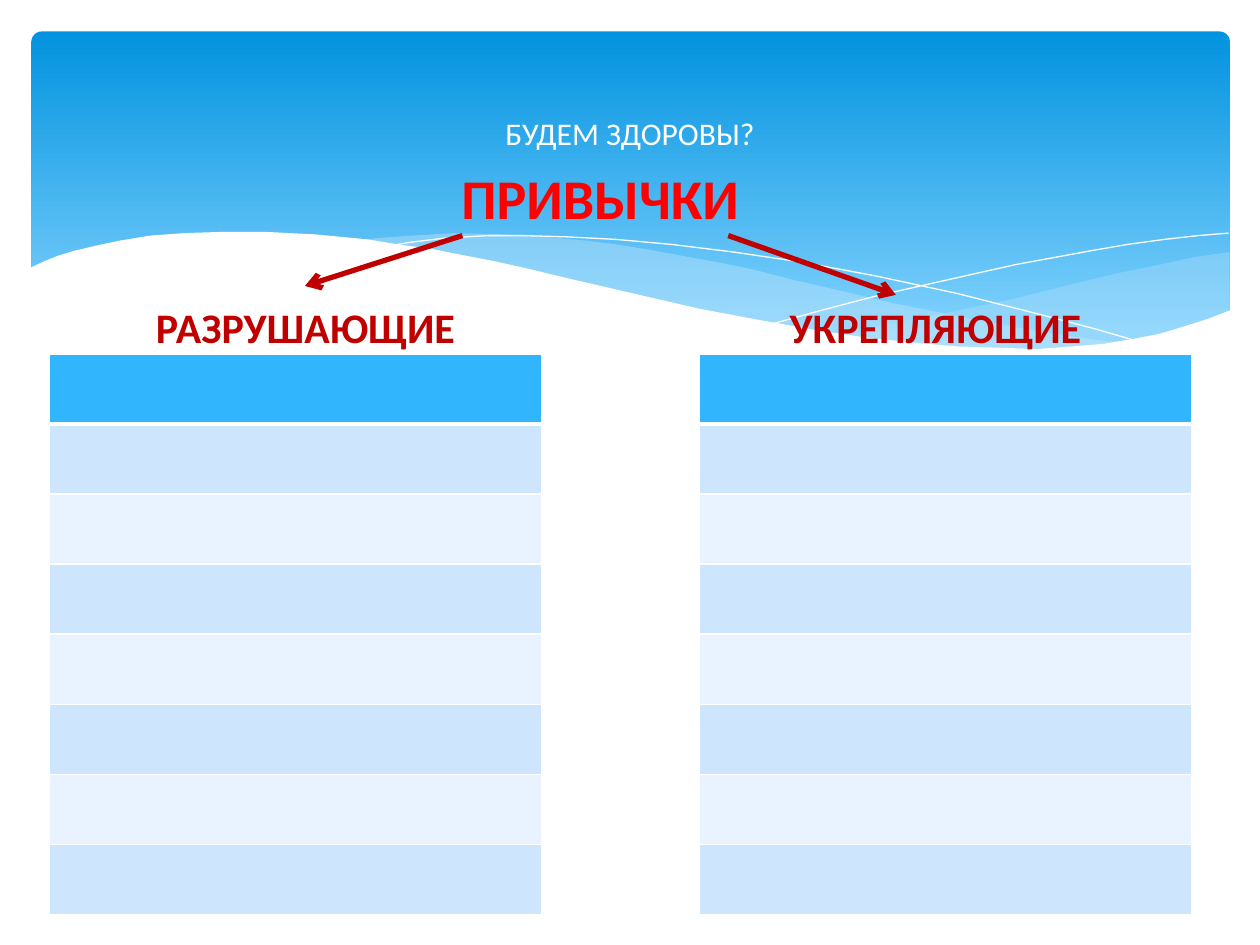
from lxml.etree import SubElement
from pptx import Presentation
from pptx.dml.color import RGBColor
from pptx.enum.shapes import MSO_CONNECTOR as CONN, MSO_SHAPE as SHAPE
from pptx.enum.text import MSO_ANCHOR as ANCHOR, MSO_AUTO_SIZE as AUTO, PP_ALIGN as ALIGN
from pptx.oxml.ns import qn
from pptx.util import Inches, Pt

WHITE = RGBColor(0xFF, 0xFF, 0xFF)
SKY_TOP = RGBColor(0x02, 0x93, 0xE0)
SKY_BOTTOM = RGBColor(0x83, 0xD3, 0xFE)
MIST = RGBColor(0xC6, 0xE7, 0xFC)
RED = RGBColor(0xFF, 0x00, 0x00)
DARK_RED = RGBColor(0xC0, 0x00, 0x00)
HEADER = RGBColor(0x31, 0xB6, 0xFD)
BANDS = [RGBColor(0xE8, 0xF3, 0xFF), RGBColor(0xCE, 0xE5, 0xFE)]

# The slide is a grid of 1000 columns by 750 rows
U = Inches(0.01)
prs = Presentation()
prs.slide_width, prs.slide_height = 1000 * U, 750 * U
s = prs.slides.add_slide(prs.slide_layouts[6])


def add_text(text, x, y, w, h, size, color, bold=True):
    tf = s.shapes.add_textbox(x * U, y * U, w * U, h * U).text_frame
    tf.word_wrap = True
    tf.auto_size = AUTO.SHAPE_TO_FIT_TEXT
    p = tf.paragraphs[0]
    p.text = text
    p.alignment = ALIGN.CENTER
    p.font.name, p.font.size, p.font.bold = "Calibri", Pt(size), bold
    p.font.color.rgb = color
    return tf


def add_wave(points, closed=True):
    fb = s.shapes.build_freeform(*points[0], scale=U)
    fb.add_line_segments(points[1:], close=closed)
    sp = fb.convert_to_shape()
    sp.shadow.inherit = False
    return sp


# Gradient sky
sp = s.shapes.add_shape(SHAPE.ROUNDED_RECTANGLE, 25 * U, 25 * U, 951 * U, 270 * U)
sp.adjustments[0] = 0.03
sp.shadow.inherit = False
sp.line.fill.background()
sp.fill.gradient()
sp.fill.gradient_angle = 270
for stop, position, color in zip(sp.fill.gradient_stops, (0, 0.9), (SKY_TOP, SKY_BOTTOM)):
    stop.position, stop.color.rgb = position, color

# Filled waves, from back to front: opacity in percent, outline
waves = [
    (29, [(976, 200), (948, 204), (921, 210), (891, 216), (861, 223), (805, 237),
          (753, 248), (706, 257), (661, 265), (691, 269), (719, 272), (745, 275),
          (769, 277), (803, 278), (835, 277), (863, 275), (889, 272), (913, 267),
          (935, 262), (949, 257), (963, 252), (976, 247)]),
    (40, [(893, 273), (866, 269), (837, 265), (807, 260), (775, 254), (741, 247),
          (706, 240), (668, 231), (629, 222), (598, 214), (569, 208), (541, 203),
          (514, 198), (489, 194), (465, 191), (442, 189), (420, 187), (399, 186),
          (361, 185), (328, 187), (299, 189), (286, 191), (323, 196), (362, 203),
          (404, 211), (449, 222), (491, 232), (530, 240), (566, 248), (601, 255),
          (634, 261), (665, 266), (695, 270), (722, 274), (748, 276), (773, 277),
          (796, 278), (828, 278), (857, 277), (876, 275)]),
    (100, [(977, 246), (959, 253), (940, 259), (920, 265), (899, 269), (875, 273),
           (850, 275), (823, 277), (793, 276), (761, 275), (726, 272), (688, 268),
           (648, 262), (603, 254), (555, 245), (503, 233), (447, 220), (418, 213),
           (391, 207), (365, 202), (340, 197), (316, 194), (292, 190), (271, 188),
           (250, 186), (230, 185), (211, 184), (177, 184), (146, 185), (119, 187),
           (95, 191), (76, 195), (59, 199), (46, 203), (36, 207), (23, 213),
           (23, 329), (977, 329)]),
]
wave_lines = [
    [(309, 195), (328, 192), (353, 189), (387, 187), (416, 187), (450, 188),
     (489, 190), (533, 194), (582, 200), (636, 208), (695, 219), (760, 233),
     (831, 251), (869, 261), (907, 272)],
    [(613, 257), (653, 246), (695, 235), (748, 223), (806, 210), (866, 199),
     (895, 194), (924, 190), (951, 187), (975, 185)],
]
for opacity, points in waves:
    if opacity == 100:  # the hairlines lie under the white wave
        for line in wave_lines:
            sp = add_wave(line, closed=False)
            sp.fill.background()
            sp.line.color.rgb, sp.line.width = WHITE, 0
    sp = add_wave(points)
    sp.line.fill.background()
    sp.fill.solid()
    sp.fill.fore_color.rgb = WHITE if opacity == 100 else MIST
    if opacity < 100:
        color = sp.fill._xPr.find(".//" + qn("a:srgbClr"))
        SubElement(color, qn("a:alpha"), val=str(opacity * 1000))

# Title and topic
tf = add_text("БУДЕМ ЗДОРОВЫ?", 50, 37, 900, 137, 18, WHITE, bold=False)
tf.auto_size = AUTO.NONE
tf.vertical_anchor = ANCHOR.MIDDLE
add_text("ПРИВЫЧКИ", 281, 125, 391, 64, 32, RED)

# Arrows from the topic to both kinds of habits
for x1, y1, x2, y2 in [(367, 187, 242, 227), (578, 187, 711, 234)]:
    arrow = s.shapes.add_connector(CONN.STRAIGHT, x1 * U, y1 * U, x2 * U, y2 * U)
    arrow.line.color.rgb, arrow.line.width = DARK_RED, Pt(3)
    SubElement(arrow.line._get_or_add_ln(), qn("a:tailEnd"), type="arrow")
    SubElement(arrow._element.spPr, qn("a:effectLst"))

# Empty tables to fill in: header row and seven banded rows
ROWS = 8
for x in (39, 555):
    table = s.shapes.add_table(ROWS, 1, x * U, 281 * U, 391 * U, 445 * U).table
    for i in range(ROWS):
        cell = table.cell(i, 0)
        tcPr = cell._tc.get_or_add_tcPr()
        widths = {"L": 1, "R": 1, "T": 3 if i == 1 else 1, "B": 3 if i == 0 else 1}
        for side, width in widths.items():
            ln = SubElement(tcPr, qn("a:ln" + side), w=str(Pt(width)))
            SubElement(SubElement(ln, qn("a:solidFill")), qn("a:srgbClr"), val=str(WHITE))
        cell.fill.solid()
        cell.fill.fore_color.rgb = BANDS[i % 2] if i else HEADER

# Table captions
add_text("РАЗРУШАЮЩИЕ", 94, 234, 297, 50, 24, DARK_RED)
add_text("УКРЕПЛЯЮЩИЕ", 563, 234, 359, 50, 24, DARK_RED)

prs.save("out.pptx")
